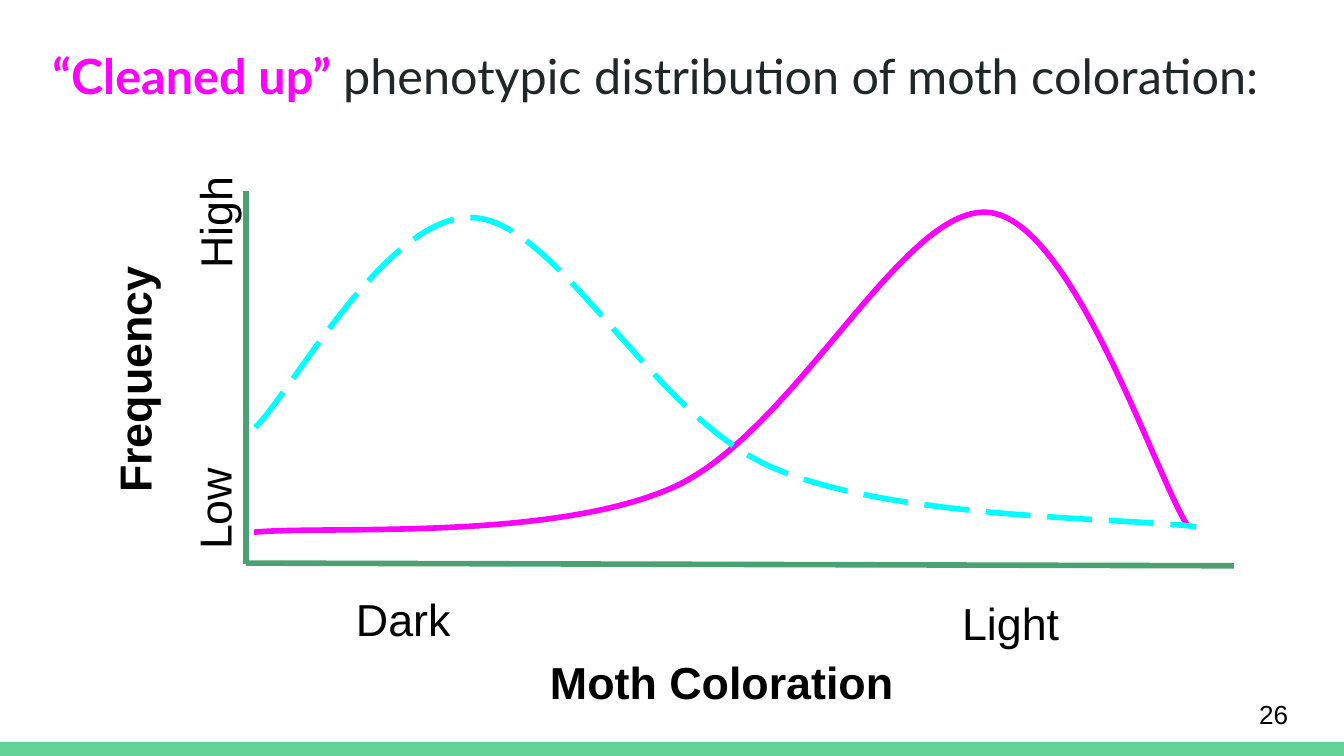
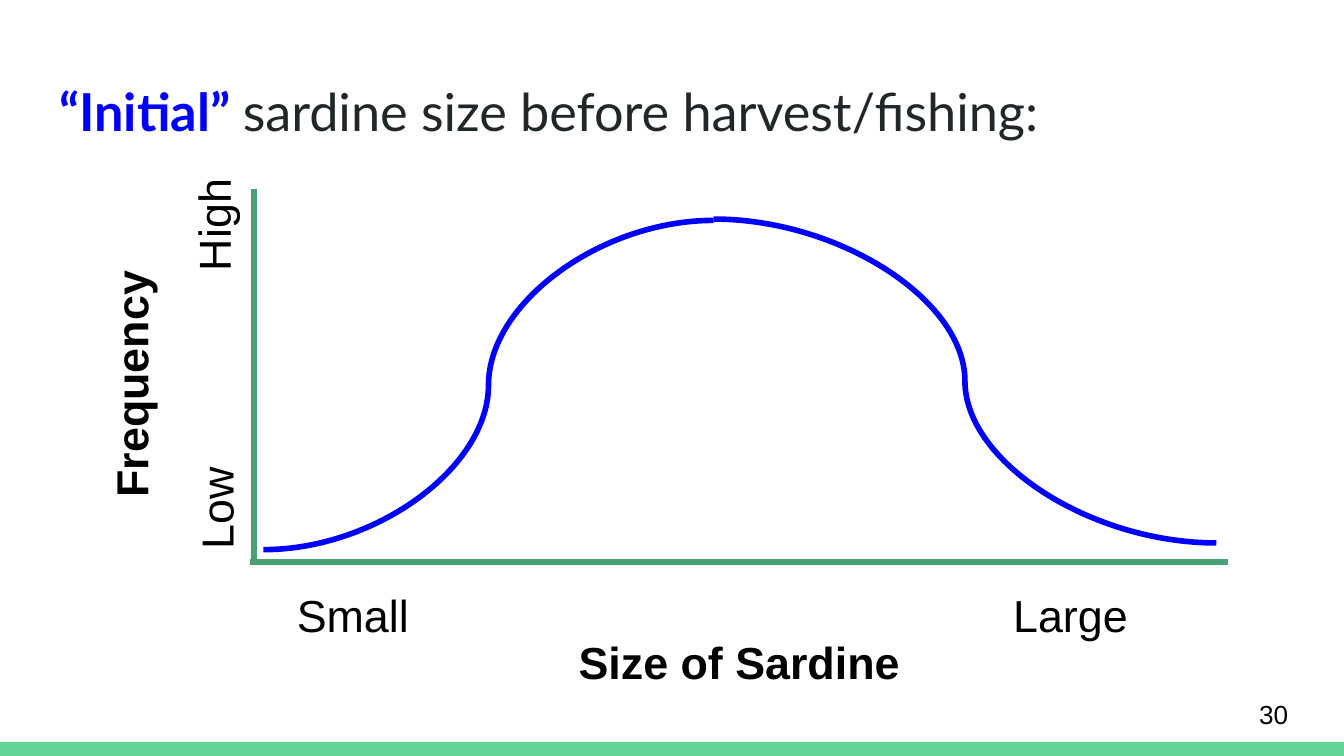
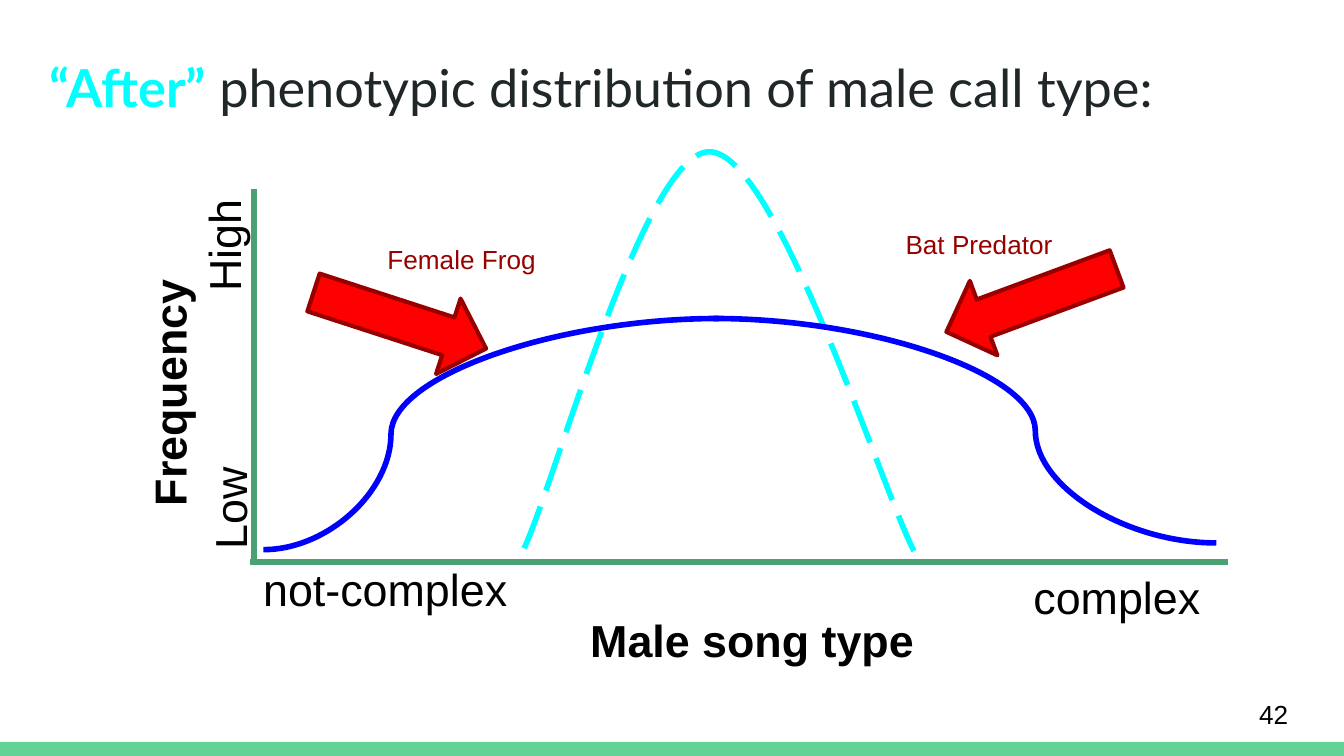
"""Build three slides of phenotype frequency curves."""

from dataclasses import dataclass
from typing import Union

import pptx
import pptx.dml.color
import pptx.enum.dml
import pptx.enum.shapes
import pptx.enum.text
import pptx.oxml
import pptx.oxml.ns
import pptx.presentation
import pptx.slide
import pptx.util

PX = 9144
SLIDE_WIDTH = 1000
INSET = 10
STROKE = 3
COLORS = {
    "band": "63D297",
    "axis": "4BA173",
    "title": "202729",
    "text": "000000",
    "magenta": "FF00FF",
    "cyan": "00FFFF",
    "blue": "0000FF",
    "push": "FF0000",
    "push_edge": "980000",
}
Point = tuple[int, int]
Box = tuple[int, int, int, int]
Bezier = tuple[Point, Point, Point]


@dataclass(frozen=True)
class Label:
    text: str
    box: Box
    size: int = 24
    color: str = "text"
    bold: bool = False
    centered: bool = False
    middle: bool = False
    rotation: int = 0


@dataclass(frozen=True)
class Axis:
    start: Point
    end: Point


@dataclass(frozen=True)
class Bell:
    start: Point
    beziers: tuple[Bezier, ...]
    color: str
    dashed: bool = False


@dataclass(frozen=True)
class Swell:
    start: Point
    end: Point
    bend: float = 0.5


@dataclass(frozen=True)
class Push:
    box: Box
    rotation: float
    leftward: bool = False


Mark = Union[Label, Bell, Swell, Push]


@dataclass(frozen=True)
class Page:
    number: int
    keyword: str
    subject: str
    accent: str
    title_at: Point
    title_size: int
    axes: tuple[Axis, Axis]
    frequency: Box
    low: Box
    high: Box
    trait: Label
    ends: tuple[Label, Label]
    marks: tuple[Mark, ...]


LEVEL_AXES = (Axis((189, 141), (189, 418)), Axis((186, 418), (914, 418)))

PAGES = (
    Page(
        26, "“Cleaned up” ", "phenotypic distribution of moth coloration:",
        "magenta", (29, 24), 26,
        axes=(Axis((183, 142), (183, 420)), Axis((183, 419), (918, 421))),
        frequency=(-11, 267, 190, 29),
        low=(101, 360, 87, 31),
        high=(99, 150, 90, 29),
        trait=Label("Moth Coloration", (355, 477, 364, 63), bold=True, centered=True),
        ends=(Label("Dark", (255, 430, 140, 29)), Label("Light", (706, 433, 155, 22))),
        marks=(
            Bell((189, 396), (
                ((241, 391), (409, 403), (500, 363)),
                ((591, 323), (671, 153), (735, 158)),
                ((798, 163), (859, 353), (884, 392)),
            ), "magenta"),
            Bell((190, 318), (
                ((217, 292), (289, 157), (353, 162)),
                ((417, 167), (486, 310), (575, 348)),
                ((665, 387), (838, 385), (890, 392)),
            ), "cyan", dashed=True),
        ),
    ),
    Page(
        30, "“Initial” ", "sardine size before harvest/fishing:",
        "blue", (34, 49), 28,
        axes=LEVEL_AXES,
        frequency=(-18, 266, 199, 29),
        low=(102, 359, 88, 31),
        high=(96, 150, 94, 29),
        trait=Label("Size of Sardine", (412, 462, 276, 32), bold=True, centered=True),
        ends=(Label("Small", (211, 427, 155, 29)), Label("Large", (744, 427, 155, 22))),
        marks=(
            Swell((196, 409), (531, 164)),
            Swell((531, 163), (905, 404)),
        ),
    ),
    Page(
        42, "“After”", " phenotypic distribution of male call type:",
        "cyan", (27, 31), 28,
        axes=LEVEL_AXES,
        frequency=(9, 271, 202, 29),
        low=(128, 349, 82, 57),
        high=(121, 151, 91, 61),
        trait=Label("Male song type", (429, 446, 261, 32), bold=True, centered=True),
        ends=(
            Label("not-complex", (186, 408, 299, 63)),
            Label("complex", (759, 414, 155, 51)),
        ),
        marks=(
            Push((230, 209, 135, 59), 18),
            Label("Female Frog", (259, 171, 169, 29), 14, "push_edge", centered=True),
            Push((700, 194, 135, 59), 339.7, leftward=True),
            Label("Bat Predator", (661, 160, 135, 44), 14, "push_edge", centered=True),
            Bell((390, 408), (
                ((413, 359), (480, 112), (528, 113)),
                ((577, 113), (655, 361), (680, 410)),
            ), "cyan", dashed=True),
            Swell((196, 409), (535, 237), 0.28),
            Swell((531, 237), (905, 404), 0.64),
        ),
    ),
)


def rgb(name: str) -> pptx.dml.color.RGBColor:
    """Return the named colour."""
    return pptx.dml.color.RGBColor.from_string(COLORS[name])


def emu(*lengths: int) -> list[int]:
    """Turn px into EMU."""
    return [length * PX for length in lengths]


def set_frame(frame, middle: bool = False) -> None:
    """Give a text frame its shared margins, wrapping and anchor."""
    frame.word_wrap = True
    frame.auto_size = pptx.enum.text.MSO_AUTO_SIZE.NONE
    frame.margin_left = frame.margin_right = INSET * PX
    frame.margin_top = frame.margin_bottom = INSET * PX
    anchors = pptx.enum.text.MSO_ANCHOR
    frame.vertical_anchor = anchors.MIDDLE if middle else anchors.TOP


def set_line(line, color: str, width: float = STROKE, dashed: bool = False) -> None:
    """Colour a line and set its width and dash."""
    line.color.rgb = rgb(color)
    line.width = pptx.util.Pt(width)
    if dashed:
        line.dash_style = pptx.enum.dml.MSO_LINE.LONG_DASH


def add_band(slide: pptx.slide.Slide, master: pptx.slide.SlideMaster) -> None:
    """Draw the bottom band and hand it to the master."""
    band = slide.shapes.add_shape(
        pptx.enum.shapes.MSO_SHAPE.RECTANGLE, *emu(0, 552, SLIDE_WIDTH, 11)
    )
    band.shadow.inherit = False
    band.fill.solid()
    band.fill.fore_color.rgb = rgb("band")
    band.line.fill.background()
    band.element.nvSpPr.cNvPr.id = 99
    master.shapes.element.append(band.element)


def add_title(slide: pptx.slide.Slide, page: Page) -> None:
    """Fill the title with its accented keyword and subject."""
    title = slide.shapes.title
    title.left, title.top, title.width, title.height = emu(*page.title_at, 932, 63)
    set_frame(title.text_frame)
    paragraph = title.text_frame.paragraphs[0]
    paragraph.alignment = pptx.enum.text.PP_ALIGN.LEFT
    paragraph.font.name = "Lato"
    paragraph.font.size = pptx.util.Pt(page.title_size)
    for text, color, bold in (
        (page.keyword, page.accent, True),
        (page.subject, "title", False),
    ):
        run = paragraph.add_run()
        run.text = text
        run.font.color.rgb = rgb(color)
        run.font.bold = bold


def add_label(slide: pptx.slide.Slide, label: Label) -> None:
    """Draw a one-line label."""
    caption = slide.shapes.add_textbox(*emu(*label.box))
    caption.rotation = label.rotation
    set_frame(caption.text_frame, label.middle)
    paragraph = caption.text_frame.paragraphs[0]
    paragraph.text = label.text
    aligns = pptx.enum.text.PP_ALIGN
    paragraph.alignment = aligns.CENTER if label.centered else aligns.LEFT
    paragraph.font.name = "Arial"
    paragraph.font.size = pptx.util.Pt(label.size)
    paragraph.font.bold = label.bold
    paragraph.font.color.rgb = rgb(label.color)


def add_stroke(slide: pptx.slide.Slide, kind, start: Point, end: Point, color: str):
    """Draw a connector without a shadow."""
    stroke = slide.shapes.add_connector(kind, *emu(*start, *end))
    set_line(stroke.line, color)
    properties = stroke.element.spPr
    properties.append(pptx.oxml.parse_xml(f"<a:effectLst {pptx.oxml.ns.nsdecls('a')}/>"))
    return stroke


def add_axis(slide: pptx.slide.Slide, axis: Axis) -> None:
    """Draw one straight axis."""
    straight = pptx.enum.shapes.MSO_CONNECTOR.STRAIGHT
    add_stroke(slide, straight, axis.start, axis.end, "axis")


def add_swell(slide: pptx.slide.Slide, swell: Swell) -> None:
    """Draw one S-shaped half of the blue distribution."""
    curve = pptx.enum.shapes.MSO_CONNECTOR.CURVE
    half = add_stroke(slide, curve, swell.start, swell.end, "blue")
    adjustments = half.element.spPr.find(".//" + pptx.oxml.ns.qn("a:avLst"))
    adjustments.append(pptx.oxml.parse_xml(
        f'<a:gd {pptx.oxml.ns.nsdecls("a")} name="adj1" '
        f'fmla="val {round(swell.bend * 100000)}"/>'
    ))


def add_bell(slide: pptx.slide.Slide, bell: Bell) -> None:
    """Draw a distribution as a smooth open outline."""
    anchors = [bezier[-1] for bezier in bell.beziers]
    builder = slide.shapes.build_freeform(*bell.start, scale=PX)
    builder.add_line_segments(anchors, close=False)
    outline = builder.convert_to_shape()
    outline.shadow.inherit = False
    outline.fill.background()
    set_line(outline.line, bell.color, dashed=bell.dashed)
    left = min(x for x, _ in (bell.start, *anchors))
    top = min(y for _, y in (bell.start, *anchors))
    segments = list(outline.element.iter(pptx.oxml.ns.qn("a:lnTo")))
    for segment, bezier in zip(segments, bell.beziers):
        points = "".join(f'<a:pt x="{x - left}" y="{y - top}"/>' for x, y in bezier)
        curve = pptx.oxml.parse_xml(
            f"<a:cubicBezTo {pptx.oxml.ns.nsdecls('a')}>{points}</a:cubicBezTo>"
        )
        segment.getparent().replace(segment, curve)


def add_push(slide: pptx.slide.Slide, push: Push) -> None:
    """Draw a block arrow for a selection pressure."""
    shapes = pptx.enum.shapes.MSO_SHAPE
    kind = shapes.LEFT_ARROW if push.leftward else shapes.RIGHT_ARROW
    arrow = slide.shapes.add_shape(kind, *emu(*push.box))
    arrow.rotation = push.rotation
    arrow.shadow.inherit = False
    arrow.fill.solid()
    arrow.fill.fore_color.rgb = rgb("push")
    set_line(arrow.line, "push_edge", 2.25)


DRAW = {Label: add_label, Bell: add_bell, Swell: add_swell, Push: add_push}


def fill_page(slide: pptx.slide.Slide, page: Page) -> None:
    """Draw the title, graph and number of one page."""
    add_title(slide, page)
    for axis in page.axes:
        add_axis(slide, axis)
    labels = (
        page.trait,
        *page.ends,
        Label("Frequency", page.frequency, bold=True, rotation=270),
        Label("Low", page.low, rotation=270),
        Label("High", page.high, rotation=270),
        Label(str(page.number), (927, 510, 60, 43), 14, middle=True),
    )
    for part in (*labels, *page.marks):
        DRAW[type(part)](slide, part)


def main() -> None:
    """Build and save the deck."""
    deck = pptx.Presentation()
    deck.slide_width = SLIDE_WIDTH * PX
    deck.slide_height = deck.slide_width * 9 // 16
    title_only = deck.slide_layouts.get_by_name("Title Only")
    for page in PAGES:
        slide = deck.slides.add_slide(title_only)
        if page is PAGES[0]:
            add_band(slide, deck.slide_master)
        fill_page(slide, page)
    deck.save("out.pptx")


if __name__ == "__main__":
    main()
